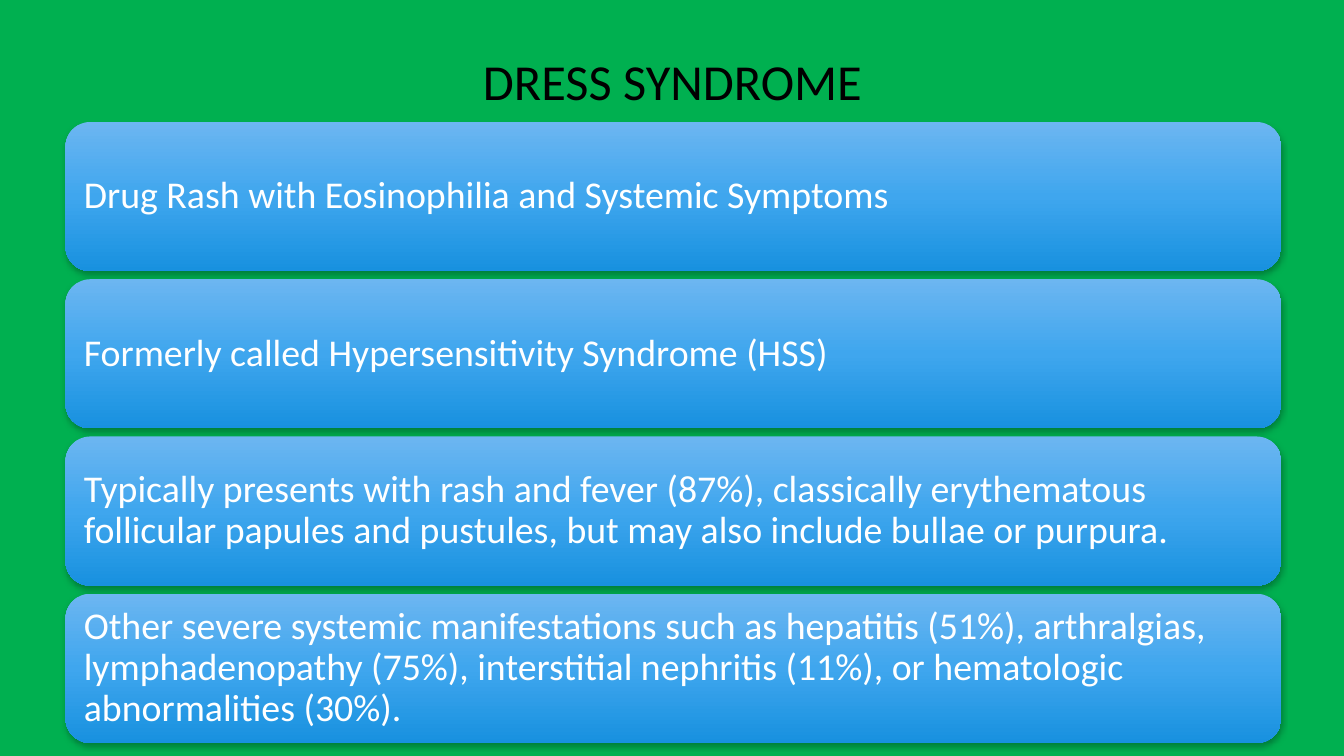
from copy import deepcopy

from lxml import etree
from pptx import Presentation
from pptx.dml.color import RGBColor
from pptx.enum.shapes import MSO_SHAPE
from pptx.enum.text import MSO_ANCHOR, PP_ALIGN
from pptx.oxml.ns import qn
from pptx.util import Inches, Pt

ROUNDED = MSO_SHAPE.ROUNDED_RECTANGLE
MIDDLE = MSO_ANCHOR.MIDDLE
CENTER, LEFT = PP_ALIGN.CENTER, PP_ALIGN.LEFT

GREEN = RGBColor(0x00, 0xB0, 0x50)
BLACK = RGBColor(0x00, 0x00, 0x00)
WHITE = RGBColor(0xFF, 0xFF, 0xFF)
BLUES = (RGBColor(0x6C, 0xB6, 0xF1), RGBColor(0x3F, 0xA6, 0xEE),
         RGBColor(0x18, 0x91, 0xDF))

# Grid of one wide column and four equal rows, in inches
COLUMN_LEFT, COLUMN_WIDTH = 0.65, 12.06
FIRST_ROW, ROW_PITCH, ROW_HEIGHT = 1.21, 1.56, 1.48

FACTS = (
    "Drug Rash with Eosinophilia and Systemic Symptoms",
    "Formerly called Hypersensitivity Syndrome (HSS)",
    "Typically presents with rash and fever (87%), classically erythematous "
    "follicular papules and pustules, but may also include bullae or purpura.",
    "Other severe systemic manifestations such as hepatitis (51%), "
    "arthralgias, lymphadenopathy (75%), interstitial nephritis (11%), "
    "or hematologic abnormalities (30%).",
)


class SlideBuilder:
    font_name = "Calibri"

    def __init__(self, slide):
        self.slide = slide

    def background(self, color):
        fill = self.slide.background.fill
        fill.solid()
        fill.fore_color.rgb = color

    def set_text(self, holder, text, size, color, align):
        frame = holder.text_frame
        frame.text = text
        frame.word_wrap = True
        frame.vertical_anchor = MIDDLE
        paragraph = frame.paragraphs[0]
        paragraph.alignment = align
        paragraph.line_spacing = 0.9
        font = paragraph.runs[0].font
        font.name, font.size = self.font_name, Pt(size)
        font.color.rgb = color

    def title(self, text):
        heading = self.slide.shapes.add_textbox(
            Inches(2.42), Inches(0.5), Inches(8.5), Inches(0.67))
        self.set_text(heading, text, 36, BLACK, CENTER)

    def panel(self, row, text):
        panel = self.slide.shapes.add_shape(
            ROUNDED, Inches(COLUMN_LEFT), Inches(FIRST_ROW + row * ROW_PITCH),
            Inches(COLUMN_WIDTH), Inches(ROW_HEIGHT))
        panel.line.fill.background()
        self.shade(panel)
        self.drop_shadow(panel)
        frame = panel.text_frame
        frame.margin_left = frame.margin_right = Inches(0.11)
        frame.margin_top = frame.margin_bottom = Inches(0.11)
        self.set_text(panel, text, 27, WHITE, LEFT)

    def shade(self, panel):
        panel.fill.gradient()
        panel.fill.gradient_angle = 270
        # The default gradient has two stops; a third one is added
        stop_list = panel._element.spPr.find(qn("a:gradFill")).find(
            qn("a:gsLst"))
        stop_list.append(deepcopy(stop_list[-1]))
        for index, (stop, blue) in enumerate(
                zip(panel.fill.gradient_stops, BLUES)):
            stop.position = index / 2
            stop.color.rgb = blue

    def drop_shadow(self, panel):
        panel.shadow.inherit = False
        effects = panel._element.spPr.find(qn("a:effectLst"))
        shadow = etree.SubElement(
            effects, qn("a:outerShdw"), blurRad=str(Pt(4)), dist=str(Pt(2)),
            dir="5400000", algn="ctr", rotWithShape="0")
        color = etree.SubElement(shadow, qn("a:srgbClr"), val=str(BLACK))
        etree.SubElement(color, qn("a:alpha"), val="28000")


def main():
    deck = Presentation()
    deck.slide_width, deck.slide_height = Inches(13.33), Inches(7.5)
    builder = SlideBuilder(deck.slides.add_slide(deck.slide_layouts[6]))

    # Background and heading
    builder.background(GREEN)
    builder.title("DRESS SYNDROME")

    # One panel per fact
    for row, fact in enumerate(FACTS):
        builder.panel(row, fact)

    deck.save("out.pptx")


if __name__ == "__main__":
    main()
